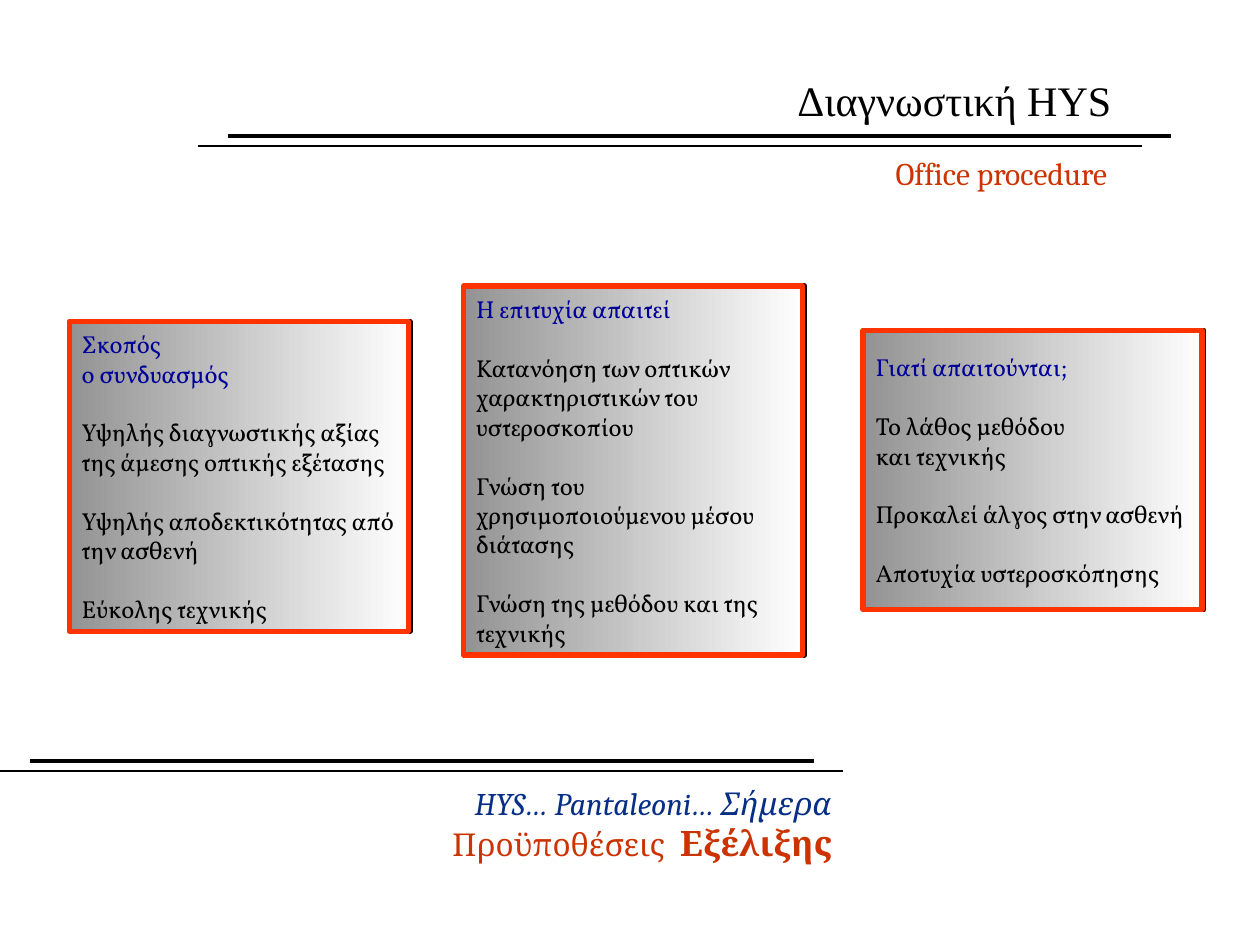
from dataclasses import dataclass

from lxml import etree
from pptx import Presentation
from pptx.dml.color import RGBColor
from pptx.enum import shapes, text
from pptx.oxml.ns import qn
from pptx.util import Inches, Pt

COLORS = {
    "black": "000000",
    "navy": "082F86",
    "rust": "CC3300",
    "heading": "000099",
    "border": "FF3300",
    "grey": "939393",
    "white": "FEFEFE",
}


@dataclass
class Card:
    left: float
    top: float
    height: float
    heading: str
    points: list[str]


@dataclass
class Rule:
    left: float
    right: float
    y: float
    weight: float


CARDS = [
    Card(0.55, 2.55, 2.46, "Σκοπός\vο συνδυασμός", [
        "Υψηλής διαγνωστικής αξίας της άμεσης οπτικής εξέτασης",
        "Υψηλής αποδεκτικότητας από την ασθενή",
        "Εύκολης τεχνικής",
    ]),
    Card(3.68, 2.27, 2.93, "Η επιτυχία απαιτεί", [
        "Κατανόηση των οπτικών χαρακτηριστικών του υστεροσκοπίου",
        "Γνώση του χρησιμοποιούμενου μέσου διάτασης",
        "Γνώση της μεθόδου και της τεχνικής",
    ]),
    Card(6.85, 2.62, 2.22, "Γιατί απαιτούνται;", [
        "Το λάθος μεθόδου\vκαι τεχνικής",
        "Προκαλεί άλγος στην ασθενή",
        "Αποτυχία υστεροσκόπησης",
    ]),
]
RULES = [
    Rule(0, 6.69, 6.12, 0.75),
    Rule(0.24, 6.46, 6.04, 2.25),
    Rule(1.57, 9.06, 1.16, 0.75),
    Rule(1.81, 9.29, 1.08, 2.25),
]
CARD_WIDTH = 2.69
LINE_PITCH = 16.8


def rgb(name: str) -> RGBColor:
    return RGBColor.from_string(COLORS[name])


def set_font(font, name: str, size: float, color: str) -> None:
    font.name = name
    font.size = Pt(size)
    font.color.rgb = rgb(color)


def add_rule(s, rule: Rule) -> None:
    y = Inches(rule.y)
    line = s.shapes.add_connector(
        shapes.MSO_CONNECTOR.STRAIGHT, Inches(rule.left), y, Inches(rule.right), y)
    line.line.color.rgb = rgb("black")
    line.line.width = Pt(rule.weight)
    etree.SubElement(line._element.spPr, qn("a:effectLst"))


def add_hard_shadow(sp) -> None:
    sp.shadow.inherit = False
    effects = sp._element.spPr.find(qn("a:effectLst"))
    shadow = etree.SubElement(effects, qn("a:outerShdw"), blurRad="0",
                              dist=str(Pt(1)), dir="0", algn="ctr", rotWithShape="0")
    etree.SubElement(shadow, qn("a:srgbClr"), val=COLORS["black"])


def add_card(s, card: Card) -> None:
    sp = s.shapes.add_shape(
        shapes.MSO_SHAPE.RECTANGLE, Inches(card.left), Inches(card.top),
        Inches(CARD_WIDTH), Inches(card.height))
    sp.fill.gradient()
    sp.fill.gradient_angle = 0
    for stop, color in zip(sp.fill.gradient_stops, ("grey", "white")):
        stop.color.rgb = rgb(color)
    sp.line.color.rgb = rgb("border")
    sp.line.width = Pt(3)
    add_hard_shadow(sp)
    tf = sp.text_frame
    tf.word_wrap = True
    tf.vertical_anchor = text.MSO_ANCHOR.MIDDLE
    for i, content in enumerate([card.heading, *card.points]):
        p = tf.add_paragraph() if i else tf.paragraphs[0]
        p.text = content
        p.alignment = text.PP_ALIGN.LEFT
        if i:
            p.space_before = Pt(LINE_PITCH)
        set_font(p.font, "Vollkorn", 14, "black" if i else "heading")


def format_line(sp, content: str, font: str, size: float, color: str) -> None:
    tf = sp.text_frame
    tf.word_wrap = True
    tf.vertical_anchor = text.MSO_ANCHOR.MIDDLE
    p = tf.paragraphs[0]
    p.text = content
    p.alignment = text.PP_ALIGN.RIGHT
    set_font(p.font, font, size, color)


def add_footer(s) -> None:
    sp = s.shapes.add_textbox(Inches(2.34), Inches(6.17), Inches(4.36), Inches(0.78))
    sp.text_frame.word_wrap = True
    p = sp.text_frame.paragraphs[0]
    p.alignment = text.PP_ALIGN.RIGHT
    runs = [
        ("HYS… Pantaleoni… Σήμερα", 18, "navy", True, False),
        ("Προϋποθέσεις", 18, "rust", False, False),
        ("  ", 20, "rust", False, False),
        ("Εξέλιξης", 20, "rust", False, True),
    ]
    for i, (content, size, color, italic, bold) in enumerate(runs):
        if i == 1:
            p.add_line_break()
        r = p.add_run()
        r.text = content
        set_font(r.font, "Cambria", size, color)
        r.font.italic = italic
        r.font.bold = bold


def main() -> None:
    prs = Presentation()
    prs.slide_width, prs.slide_height = Inches(10), Inches(7.5)
    s = prs.slides.add_slide(prs.slide_layouts[5])

    title = s.shapes.title
    title.left, title.top = Inches(0.75), Inches(0.58)
    title.width, title.height = Inches(8.17), Inches(0.42)
    format_line(title, "Διαγνωστική HYS", "Times New Roman", 24, "black")

    subtitle = s.shapes.add_textbox(Inches(0.77), Inches(1.12), Inches(8.17), Inches(0.5))
    format_line(subtitle, "Office procedure ", "Cambria", 18, "rust")

    for rule in RULES:
        add_rule(s, rule)
    for card in CARDS:
        add_card(s, card)
    add_footer(s)
    prs.save("out.pptx")


if __name__ == "__main__":
    main()
